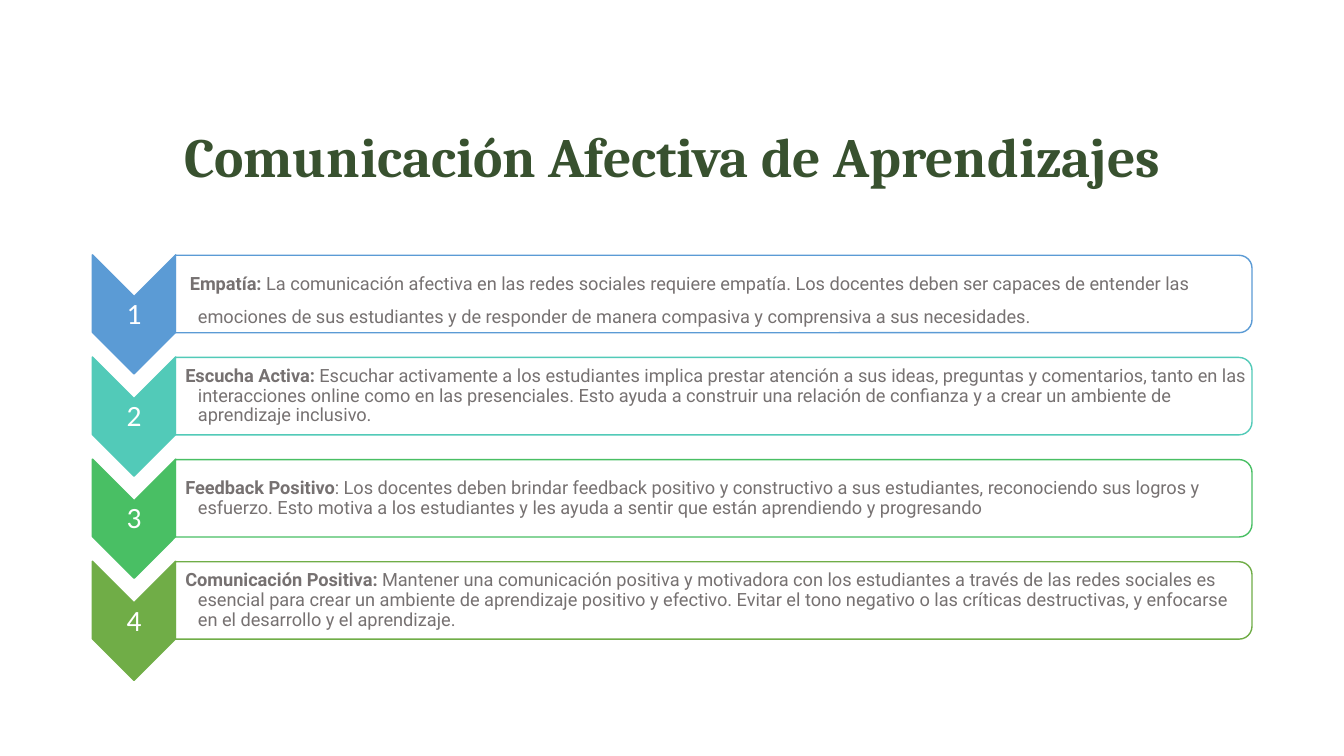
from dataclasses import dataclass

from lxml.etree import SubElement
from pptx import Presentation
from pptx.dml.color import RGBColor
from pptx.enum.shapes import MSO_SHAPE
from pptx.enum.text import MSO_ANCHOR, MSO_AUTO_SIZE, PP_ALIGN
from pptx.oxml.ns import qn
from pptx.shapes.autoshape import Shape
from pptx.slide import Slide
from pptx.text.text import TextFrame, _Paragraph
from pptx.util import Pt

HUES = {
    "title": "38512F",
    "text": "767171",
    "white": "FFFFFF",
    "blue": "5B9BD5",
    "teal": "52CAB8",
    "green": "49BF64",
    "olive": "70AD47",
}
PITCH = 72.96


@dataclass
class Step:
    hue: str
    head: str
    body: str
    space: float = 0.9


STEPS = [
    Step("blue", " Empatía: ",
         "La comunicación afectiva en las redes sociales requiere empatía. "
         "Los docentes deben ser capaces de entender las emociones de sus "
         "estudiantes y de responder de manera compasiva y comprensiva a sus "
         "necesidades.", 1.5),
    Step("teal", "Escucha Activa: ",
         "Escuchar activamente a los estudiantes implica prestar atención a "
         "sus ideas, preguntas y comentarios, tanto en las interacciones "
         "online como en las presenciales. Esto ayuda a construir una "
         "relación de confianza y a crear un ambiente de aprendizaje "
         "inclusivo."),
    Step("green", "Feedback Positivo",
         ": Los docentes deben brindar feedback positivo y constructivo a "
         "sus estudiantes, reconociendo sus logros y esfuerzo. Esto motiva a "
         "los estudiantes y les ayuda a sentir que están aprendiendo y "
         "progresando"),
    Step("olive", "Comunicación Positiva: ",
         "Mantener una comunicación positiva y motivadora con los "
         "estudiantes a través de las redes sociales es esencial para crear "
         "un ambiente de aprendizaje positivo y efectivo. Evitar el tono "
         "negativo o las críticas destructivas, y enfocarse en el desarrollo "
         "y el aprendizaje."),
]


def tint(name: str) -> RGBColor:
    return RGBColor.from_string(HUES[name])


def add_run(para: _Paragraph, text: str, font: str, size: float, hue: str,
            bold: bool = False) -> None:
    run = para.add_run()
    run.text = text
    run.font.name = font
    run.font.size = Pt(size)
    run.font.bold = bold
    run.font.color.rgb = tint(hue)


def set_frame(frame: TextFrame, left: float, top: float, right: float,
              base: float) -> None:
    frame.word_wrap = True
    frame.auto_size = MSO_AUTO_SIZE.NONE
    frame.vertical_anchor = MSO_ANCHOR.MIDDLE
    frame.margin_left, frame.margin_top = Pt(left), Pt(top)
    frame.margin_right, frame.margin_bottom = Pt(right), Pt(base)


def add_box(slide: Slide, x: float, y: float, wide: float, high: float,
            inset: float, space: float) -> _Paragraph:
    box = slide.shapes.add_textbox(Pt(x), Pt(y), Pt(wide), Pt(high))
    set_frame(box.text_frame, inset, 0.72, 0.72, 0.72)
    para = box.text_frame.paragraphs[0]
    para.line_spacing = space
    return para


def add_turned(slide: Slide, kind: MSO_SHAPE, mid_x: float, mid_y: float,
               wide: float, high: float, fill: str, line: str) -> Shape:
    shape = slide.shapes.add_shape(kind, Pt(mid_x - wide / 2),
                                   Pt(mid_y - high / 2), Pt(wide), Pt(high))
    shape.rotation = 90
    shape.shadow.inherit = False
    shape.fill.solid()
    shape.fill.fore_color.rgb = tint(fill)
    shape.line.color.rgb = tint(line)
    shape.line.width = Pt(1)
    return shape


def add_title(slide: Slide) -> None:
    title = slide.shapes.title
    title.left, title.top = Pt(66.24), Pt(100.8)
    title.width, title.height = Pt(828), Pt(71.28)
    set_frame(title.text_frame, 7.2, 0, 7.2, 45.5)
    para = title.text_frame.paragraphs[0]
    para.alignment = PP_ALIGN.CENTER
    para.line_spacing = 0.9
    add_run(para, "Comunicación Afectiva de Aprendizajes", "Cambria", 39.6,
            "title", True)


def add_step(slide: Slide, rank: int, step: Step) -> None:
    down = rank * PITCH
    add_turned(slide, MSO_SHAPE.CHEVRON, 95.75, 224.6 + down, 85.1, 59.5,
               step.hue, step.hue)

    label = add_box(slide, 66.1, 212.4 + down, 59.2, 25.4, 0.72, 0.9)
    label.alignment = PP_ALIGN.CENTER
    add_run(label, str(rank + 1), "Calibri", 21, "white")

    bar = add_turned(slide, MSO_SHAPE.ROUND_2_SAME_RECTANGLE, 509.8,
                     210 + down, 55.3, 769, "white", step.hue)
    shade = bar.fill._xPr.find(qn("a:solidFill"))[0]
    SubElement(shade, qn("a:alpha"), val="90000")

    para = add_box(slide, 125.3, 185.1 + down, 766.2, 49.8, 7.2, step.space)
    para.level = 1
    props = para._p.get_or_add_pPr()
    props.set("marL", str(Pt(9)))
    props.set("indent", str(Pt(-9)))
    add_run(para, step.head, "Roboto", 13, "text", True)
    add_run(para, step.body, "Roboto", 13, "text")


def main() -> None:
    deck = Presentation()
    deck.slide_width, deck.slide_height = Pt(960), Pt(540)
    slide = deck.slides.add_slide(deck.slide_layouts[5])
    add_title(slide)
    for rank, step in enumerate(STEPS):
        add_step(slide, rank, step)
    deck.save("out.pptx")


if __name__ == "__main__":
    main()
